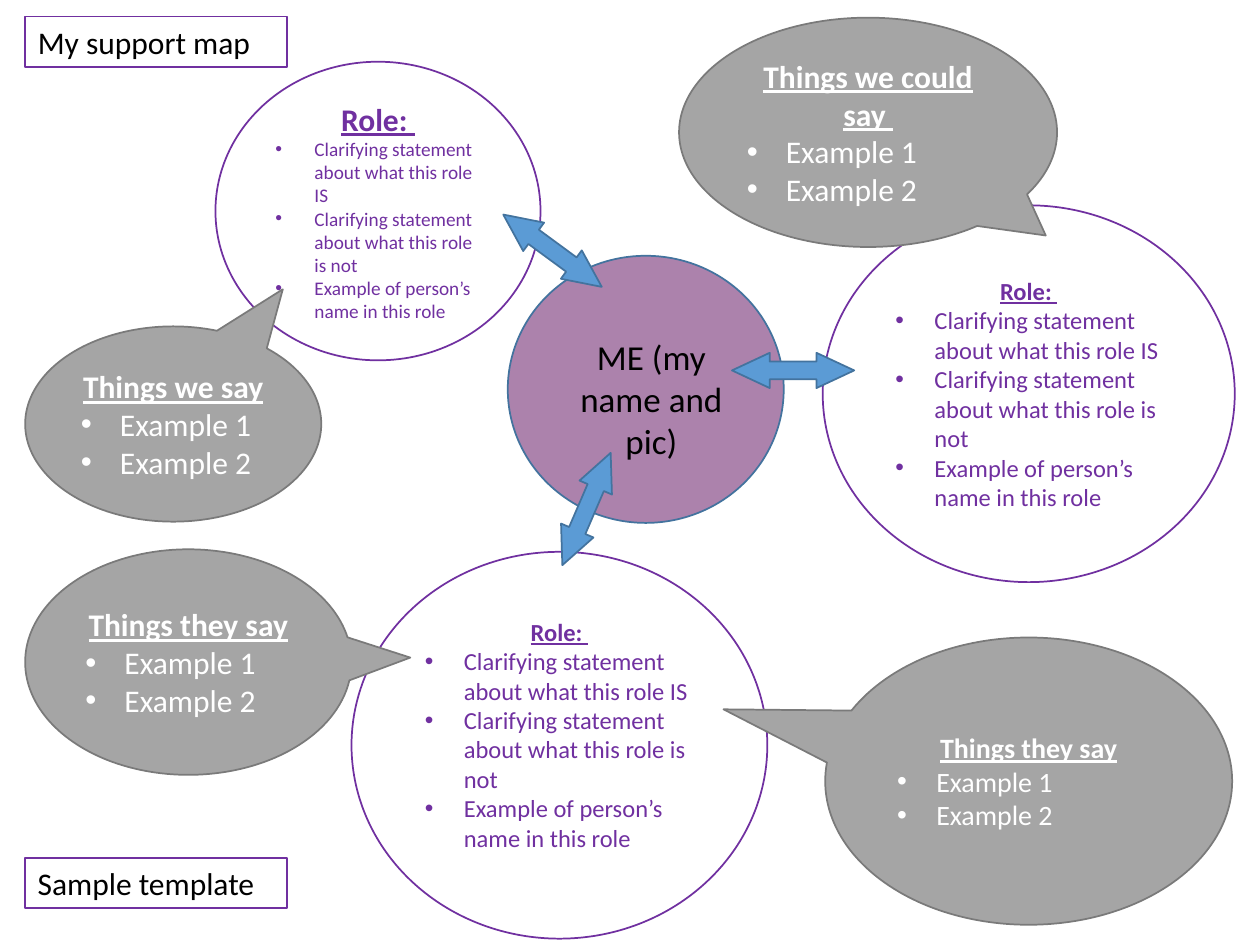
from pptx import Presentation
from pptx.dml.color import RGBColor
from pptx.enum.shapes import MSO_SHAPE
from pptx.enum.text import MSO_ANCHOR, PP_ALIGN
from pptx.util import Inches, Pt
from lxml.etree import SubElement
from pptx.oxml.ns import qn

PURPLE, MAUVE, BLUE, NAVY = "7030A0", "AC82AC", "5B9BD5", "43739E"
GREY, DARK_GREY, WHITE, BLACK = "A5A5A5", "7A7A7A", "FFFFFF", "000000"

heading = ("My support map", (0.2, 0.13, 2.08, 0.4))
footer = ("Sample template", (0.2, 6.81, 2.08, 0.4))
me = ("ME (my name and pic)", (4.03, 2.03, 2.19, 2.12), (4.29, 2.61, 1.76, 1.1))

role_points = [
    "Clarifying statement about what this role IS",
    "Clarifying statement about what this role is not",
    "Example of person’s name in this role",
]
roles = [
    ((6.53, 1.63, 3.27, 2.99), 14, 14, 0.05),
    ((1.71, 0.49, 2.58, 2.37), 18, 11, 0.05),
    ((2.79, 4.38, 3.3, 3.07), 14, 14, 0.22),
]
examples = ["Example 1", "Example 2"]
sayings = [
    ("Things we could say ", (5.39, 0.14, 3, 1.82), (0.47, 0.45), 18),
    ("Things we say ", (0.2, 2.59, 2.35, 1.55), (0.37, -0.69), 18),
    ("Things they say ", (0.2, 4.36, 2.59, 1.79), (0.68, -0.02), 18),
    ("Things they say", (6.55, 5.06, 3.23, 2.28), (-0.75, -0.25), 16),
]
links = [((3.9, 1.85), 36.3), ((5.81, 2.8), 0), ((4.17, 3.9), 293.3)]
link_size = (0.97, 0.28)


def color(hex_code):
    return RGBColor.from_string(hex_code)


def paint(shape, fill, line):
    shape.fill.solid()
    shape.fill.fore_color.rgb = color(fill)
    shape.line.color.rgb = color(line)
    shape.line.width = Pt(1)


def add_figure(kind, box, fill, line):
    figure = slide.shapes.add_shape(kind, *map(Inches, box))
    figure.shadow.inherit = False
    paint(figure, fill, line)
    return figure


def style(paragraph, size, ink, align=PP_ALIGN.LEFT, strong=False):
    paragraph.alignment = align
    for run in paragraph.runs:
        run.font.name = "Calibri"
        run.font.size = Pt(size)
        run.font.color.rgb = color(ink)
        run.font.bold = run.font.underline = strong


def add_bullet(paragraph):
    properties = paragraph._p.get_or_add_pPr()
    properties.set("marL", str(Inches(0.31)))
    properties.set("indent", str(-Inches(0.31)))
    SubElement(properties, qn("a:buFont"), typeface="Arial")
    SubElement(properties, qn("a:buChar"), char="•")


def write_list(figure, caption, points, caption_size, point_size, ink):
    frame = figure.text_frame
    frame.word_wrap = True
    frame.vertical_anchor = MSO_ANCHOR.MIDDLE
    frame.text = "\n".join([caption, *points])
    first, *rest = frame.paragraphs
    style(first, caption_size, ink, PP_ALIGN.CENTER, True)
    for paragraph in rest:
        style(paragraph, point_size, ink)
        add_bullet(paragraph)


def write_label(label, text):
    paint(label, WHITE, PURPLE)
    frame = label.text_frame
    frame.word_wrap = True
    frame.vertical_anchor = MSO_ANCHOR.TOP
    frame.text = text
    style(frame.paragraphs[0], 18, BLACK)


deck = Presentation()
deck.slide_width, deck.slide_height = Inches(10), Inches(7.5)
slide = deck.slides.add_slide(deck.slide_layouts[5])

title_text, title_box = heading
title = slide.shapes.title
title.left, title.top, title.width, title.height = map(Inches, title_box)
write_label(title, title_text)

me_text, me_circle, me_box = me
add_figure(MSO_SHAPE.OVAL, me_circle, MAUVE, NAVY)
me_label = slide.shapes.add_textbox(*map(Inches, me_box))
me_label.text_frame.word_wrap = True
me_label.text_frame.text = me_text
style(me_label.text_frame.paragraphs[0], 20, BLACK, PP_ALIGN.CENTER)

for box, caption_size, point_size, bottom in roles:
    role = add_figure(MSO_SHAPE.OVAL, box, WHITE, PURPLE)
    write_list(role, "Role: ", role_points, caption_size, point_size, PURPLE)
    role.text_frame.margin_bottom = Inches(bottom)

for caption, box, tip, size in sayings:
    saying = add_figure(MSO_SHAPE.OVAL_CALLOUT, box, GREY, DARK_GREY)
    saying.adjustments[0], saying.adjustments[1] = tip
    write_list(saying, caption, examples, size, size, WHITE)

for corner, angle in links:
    link = add_figure(MSO_SHAPE.LEFT_RIGHT_ARROW, corner + link_size, BLUE, NAVY)
    link.adjustments[0], link.adjustments[1] = 0.5, 1.07
    link.rotation = angle

footer_text, footer_box = footer
write_label(add_figure(MSO_SHAPE.RECTANGLE, footer_box, WHITE, PURPLE), footer_text)

deck.save("out.pptx")
